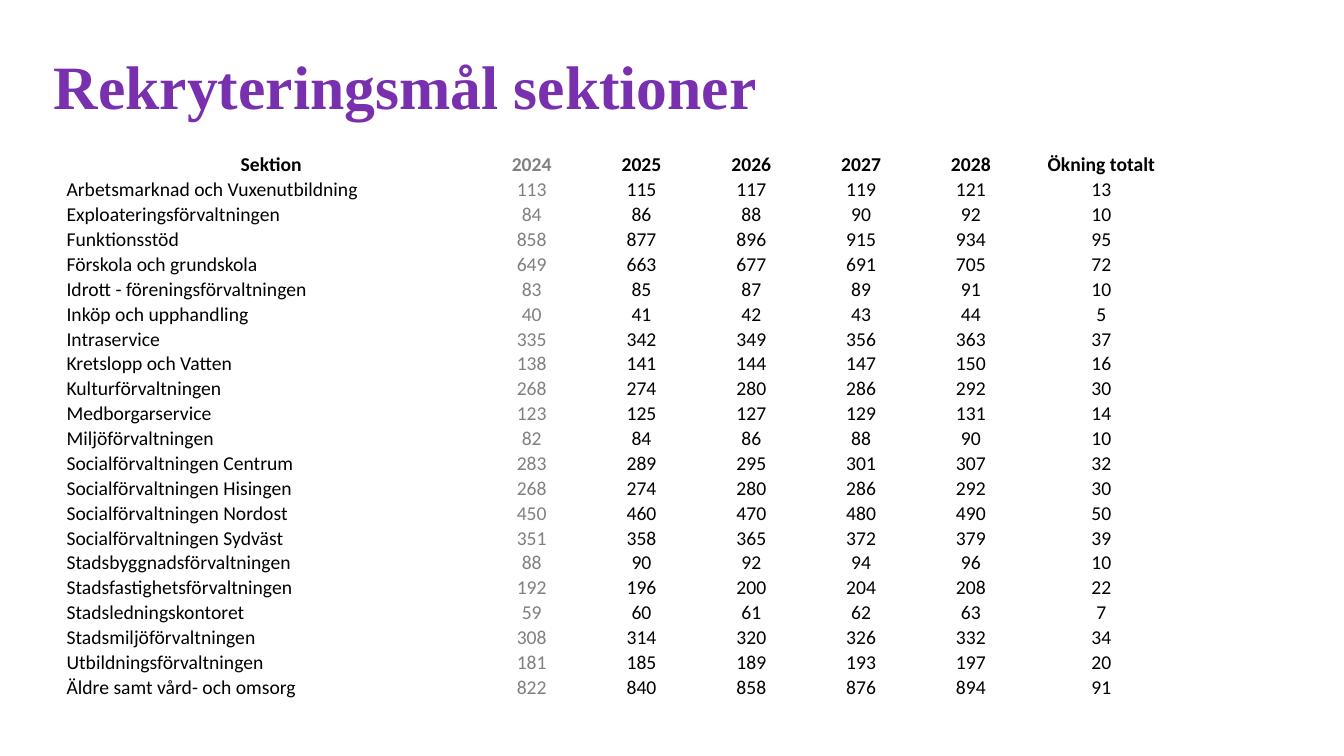
from dataclasses import dataclass

from pptx import Presentation
from pptx import util as u
from pptx.dml.color import RGBColor
from pptx.enum import text

HEADERS = ["Sektion", "2024", "2025", "2026", "2027", "2028", "Ökning totalt"]
SECTIONS = [
    ("Arbetsmarknad och Vuxenutbildning", 113, 115, 117, 119, 121, 13),
    ("Exploateringsförvaltningen", 84, 86, 88, 90, 92, 10),
    ("Funktionsstöd", 858, 877, 896, 915, 934, 95),
    ("Förskola och grundskola", 649, 663, 677, 691, 705, 72),
    ("Idrott - föreningsförvaltningen", 83, 85, 87, 89, 91, 10),
    ("Inköp och upphandling", 40, 41, 42, 43, 44, 5),
    ("Intraservice", 335, 342, 349, 356, 363, 37),
    ("Kretslopp och Vatten", 138, 141, 144, 147, 150, 16),
    ("Kulturförvaltningen", 268, 274, 280, 286, 292, 30),
    ("Medborgarservice", 123, 125, 127, 129, 131, 14),
    ("Miljöförvaltningen", 82, 84, 86, 88, 90, 10),
    ("Socialförvaltningen Centrum", 283, 289, 295, 301, 307, 32),
    ("Socialförvaltningen Hisingen", 268, 274, 280, 286, 292, 30),
    ("Socialförvaltningen Nordost", 450, 460, 470, 480, 490, 50),
    ("Socialförvaltningen Sydväst", 351, 358, 365, 372, 379, 39),
    ("Stadsbyggnadsförvaltningen", 88, 90, 92, 94, 96, 10),
    ("Stadsfastighetsförvaltningen", 192, 196, 200, 204, 208, 22),
    ("Stadsledningskontoret", 59, 60, 61, 62, 63, 7),
    ("Stadsmiljöförvaltningen", 308, 314, 320, 326, 332, 34),
    ("Utbildningsförvaltningen", 181, 185, 189, 193, 197, 20),
    ("Äldre samt vård- och omsorg", 822, 840, 858, 876, 894, 91),
]
COLUMN_WIDTHS = [30.6] + [8.17] * 5 + [11.25]
BASELINE_COLUMN = HEADERS.index("2024")


@dataclass(frozen=True)
class Theme:
    heading: RGBColor = RGBColor(0x79, 0x30, 0xAE)
    body: RGBColor = RGBColor(0, 0, 0)
    muted: RGBColor = RGBColor(0x80, 0x80, 0x80)
    heading_font: str = "Times New Roman"
    body_font: str = "Calibri"
    heading_size: int = 44
    body_size: int = 14


class SlideBuilder:
    """Places elements on a grid of 100 columns by 100 rows."""

    def __init__(self, presentation, theme):
        self.theme = theme
        self.column = presentation.slide_width / 100
        self.row = presentation.slide_height / 100
        self.slide = presentation.slides.add_slide(presentation.slide_layouts[5])

    def box(self, left, top, width, height):
        return (round(left * self.column), round(top * self.row),
                round(width * self.column), round(height * self.row))

    def style(self, paragraph, name, size, color, bold):
        font = paragraph.font
        font.name, font.size, font.bold = name, u.Pt(size), bold
        font.color.rgb = color

    def title(self, wording, *place):
        shape = self.slide.shapes.title
        shape.left, shape.top, shape.width, shape.height = self.box(*place)
        frame = shape.text_frame
        frame.text = wording
        frame.word_wrap = True
        frame.auto_size = text.MSO_AUTO_SIZE.NONE
        frame.vertical_anchor = text.MSO_ANCHOR.TOP
        frame.margin_left = frame.margin_right = 0
        frame.margin_top = frame.margin_bottom = 0
        paragraph = frame.paragraphs[0]
        paragraph.alignment = text.PP_ALIGN.LEFT
        paragraph.line_spacing = 1.1
        self.style(paragraph, self.theme.heading_font, self.theme.heading_size,
                   self.theme.heading, True)

    def table(self, rows, widths, left, top, height):
        place = self.box(left, top, sum(widths), height)
        table = self.slide.shapes.add_table(len(rows), len(widths), *place).table
        table.first_row = table.horz_banding = False
        for column, width in zip(table.columns, widths):
            column.width = round(width * self.column)
        for r, values in enumerate(rows):
            table.rows[r].height = round(height * self.row / len(rows))
            for c, value in enumerate(values):
                self.cell(table.cell(r, c), str(value), header=r == 0,
                          label=c == 0, muted=c == BASELINE_COLUMN)

    def cell(self, cell, wording, header, label, muted):
        cell.fill.background()
        cell.margin_left = cell.margin_right = cell.margin_top = u.Inches(0.01)
        cell.margin_bottom = 0
        cell.vertical_anchor = text.MSO_ANCHOR.BOTTOM
        cell.text = wording
        paragraph = cell.text_frame.paragraphs[0]
        left_aligned = label and not header
        paragraph.alignment = text.PP_ALIGN.LEFT if left_aligned else text.PP_ALIGN.CENTER
        color = self.theme.muted if muted else self.theme.body
        self.style(paragraph, self.theme.body_font, self.theme.body_size, color, header)


def main():
    presentation = Presentation()
    presentation.slide_width = u.Inches(13.33)
    presentation.slide_height = u.Inches(7.5)
    builder = SlideBuilder(presentation, Theme())
    builder.title("Rekryteringsmål sektioner", 4, 5.33, 79.75, 18.93)
    builder.table([HEADERS, *SECTIONS], COLUMN_WIDTHS, left=4.88, top=20.13, height=70.93)
    presentation.save("out.pptx")


if __name__ == "__main__":
    main()
